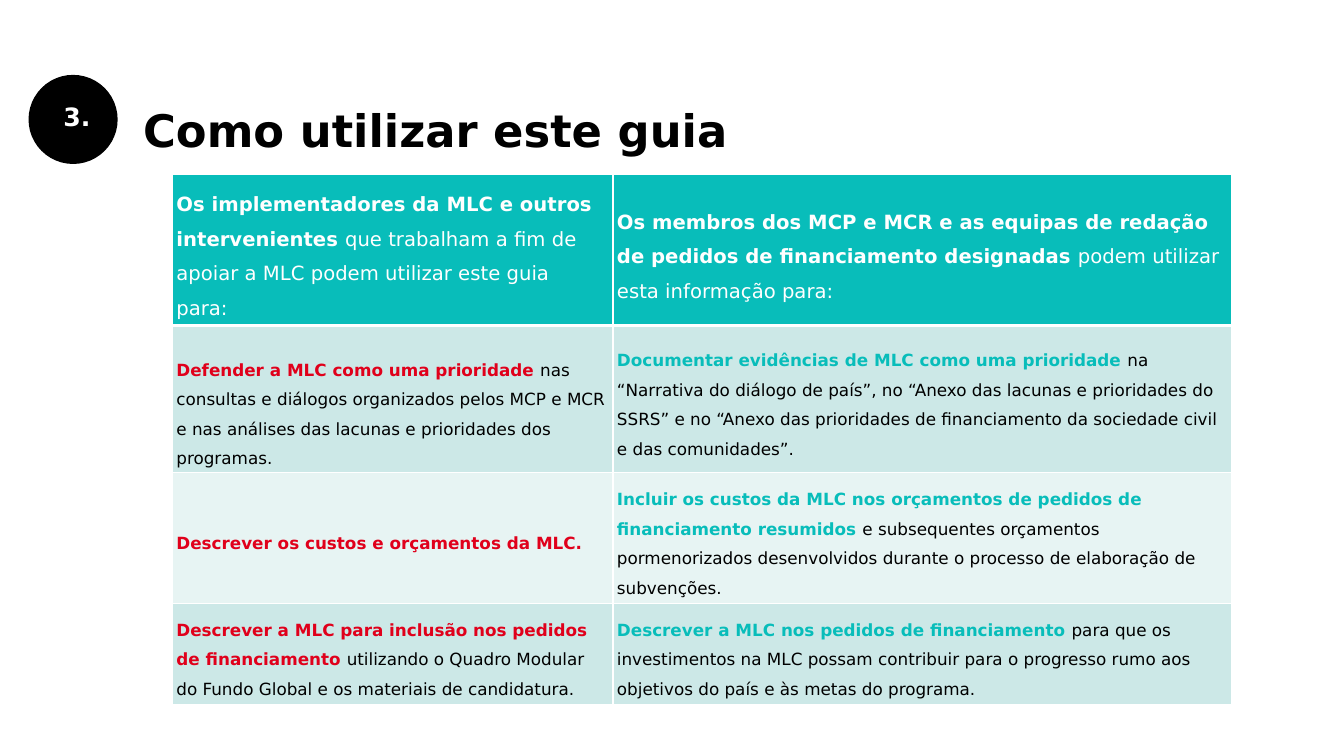
from dataclasses import dataclass
from lxml.etree import SubElement
from pptx import Presentation
from pptx.dml.color import RGBColor
from pptx.enum.shapes import MSO_SHAPE
from pptx.enum.text import MSO_ANCHOR
from pptx.oxml.ns import qn
from pptx.util import Emu, Pt


@dataclass(frozen=True)
class Theme:
    font: str = "DejaVu Sans"
    black: str = "000000"
    white: str = "FFFFFF"
    teal: str = "08BDBA"
    red: str = "E0001B"
    band_dark: str = "CCE8E7"
    band_light: str = "E7F4F3"
    title_size: int = 32
    number_size: int = 18
    header_size: int = 14
    body_size: int = 12


THEME = Theme()
EMU_PER_PX = 9144

COLUMN_WIDTHS = [437, 614]
ROW_HEIGHTS = [147, 146, 127, 97]
HEADERS = [
    ("Os implementadores da MLC e outros intervenientes ",
     "que trabalham a fim de apoiar a MLC podem utilizar este guia para:"),
    ("Os membros dos MCP e MCR e as equipas de redação de pedidos de financiamento designadas ",
     "podem utilizar esta informação para:"),
]
USES = [
    [("Defender a MLC como uma prioridade ",
      "nas consultas e diálogos organizados pelos MCP e MCR e nas análises das lacunas "
      "e prioridades dos programas."),
     ("Documentar evidências de MLC como uma prioridade ",
      "na “Narrativa do diálogo de país”, no “Anexo das lacunas e prioridades do SSRS” e no "
      "“Anexo das prioridades de financiamento da sociedade civil e das comunidades”.")],
    [("Descrever os custos e orçamentos da MLC.", ""),
     ("Incluir os custos da MLC nos orçamentos de pedidos de financiamento resumidos ",
      "e subsequentes orçamentos pormenorizados desenvolvidos durante o processo de "
      "elaboração de subvenções.")],
    [("Descrever a MLC para inclusão nos pedidos de financiamento ",
      "utilizando o Quadro Modular do Fundo Global e os materiais de candidatura."),
     ("Descrever a MLC nos pedidos de financiamento ",
      "para que os investimentos na MLC possam contribuir para o progresso rumo aos "
      "objetivos do país e às metas do programa.")],
]


def px(length):
    return Emu(length * EMU_PER_PX)


def add_span(para, text, size, color, bold):
    span = para.add_run()
    span.text = text
    span.font.name = THEME.font
    span.font.size = Pt(size)
    span.font.bold = bold
    span.font.color.rgb = RGBColor.from_string(color)


def set_margins(target, left, top, right, bottom):
    target.margin_left, target.margin_top = px(left), px(top)
    target.margin_right, target.margin_bottom = px(right), px(bottom)


def add_number_badge(page, number):
    circle = page.shapes.add_shape(MSO_SHAPE.OVAL, px(29), px(75), px(87), px(87))
    circle.shadow.inherit = False
    circle.fill.solid()
    circle.fill.fore_color.rgb = RGBColor.from_string(THEME.black)
    circle.line.color.rgb = RGBColor.from_string(THEME.black)
    circle.line.width = Pt(1)
    box = page.shapes.add_textbox(px(53), px(96), px(60), px(40))
    box.text_frame.word_wrap = True
    add_span(box.text_frame.paragraphs[0], number, THEME.number_size, THEME.white, True)


def add_title(page, text):
    box = page.shapes.add_textbox(px(142), px(72), px(1050), px(87))
    frame = box.text_frame
    frame.word_wrap = True
    frame.vertical_anchor = MSO_ANCHOR.MIDDLE
    set_margins(frame, 0, 0, 0, 0)
    para = frame.paragraphs[0]
    para.line_spacing = 1.5
    add_span(para, text, THEME.title_size, THEME.black, True)


def set_borders(cell, top, bottom):
    """Draw white cell borders; widths in points, sides always 1."""
    properties = cell._tc.get_or_add_tcPr()
    for side, width in (("L", 1), ("R", 1), ("T", top), ("B", bottom)):
        line = SubElement(properties, qn(f"a:ln{side}"), w=str(Pt(width)))
        fill = SubElement(line, qn("a:solidFill"))
        SubElement(fill, qn("a:srgbClr"), val=THEME.white)


def fill_cell(cell, phrases, size, colors, background, right_margin=6):
    """Write a bold lead phrase and its plain continuation."""
    cell.vertical_anchor = MSO_ANCHOR.MIDDLE
    set_margins(cell, 4, 6, right_margin, 4)
    para = cell.text_frame.paragraphs[0]
    para.line_spacing = 1.5
    for text, color, bold in zip(phrases, colors, (True, False)):
        if text:
            add_span(para, text, size, color, bold)
    cell.fill.solid()
    cell.fill.fore_color.rgb = RGBColor.from_string(background)


def add_uses_table(page):
    frame = page.shapes.add_table(
        len(ROW_HEIGHTS), len(COLUMN_WIDTHS), px(171), px(173),
        px(sum(COLUMN_WIDTHS)), px(sum(ROW_HEIGHTS)))
    table = frame.table
    for column, width in zip(table.columns, COLUMN_WIDTHS):
        column.width = px(width)
    for row, height in zip(table.rows, ROW_HEIGHTS):
        row.height = px(height)

    for index, row in enumerate(table.rows):
        for cell in row.cells:
            set_borders(cell, top=3 if index == 1 else 1, bottom=3 if index == 0 else 1)

    for cell, phrases in zip(table.rows[0].cells, HEADERS):
        fill_cell(cell, phrases, THEME.header_size, (THEME.white, THEME.white),
                  THEME.teal, right_margin=10)
    for index, uses in enumerate(USES, start=1):
        band = THEME.band_dark if index % 2 else THEME.band_light
        for cell, phrases, lead in zip(table.rows[index].cells, uses, (THEME.red, THEME.teal)):
            fill_cell(cell, phrases, THEME.body_size, (lead, THEME.black), band)
    table.cell(1, 0).vertical_anchor = MSO_ANCHOR.BOTTOM


def main():
    deck = Presentation()
    deck.slide_width, deck.slide_height = px(1333), px(750)
    page = deck.slides.add_slide(deck.slide_layouts[6])
    add_number_badge(page, "3.")
    add_title(page, "Como utilizar este guia")
    add_uses_table(page)
    deck.save("out.pptx")


if __name__ == "__main__":
    main()
